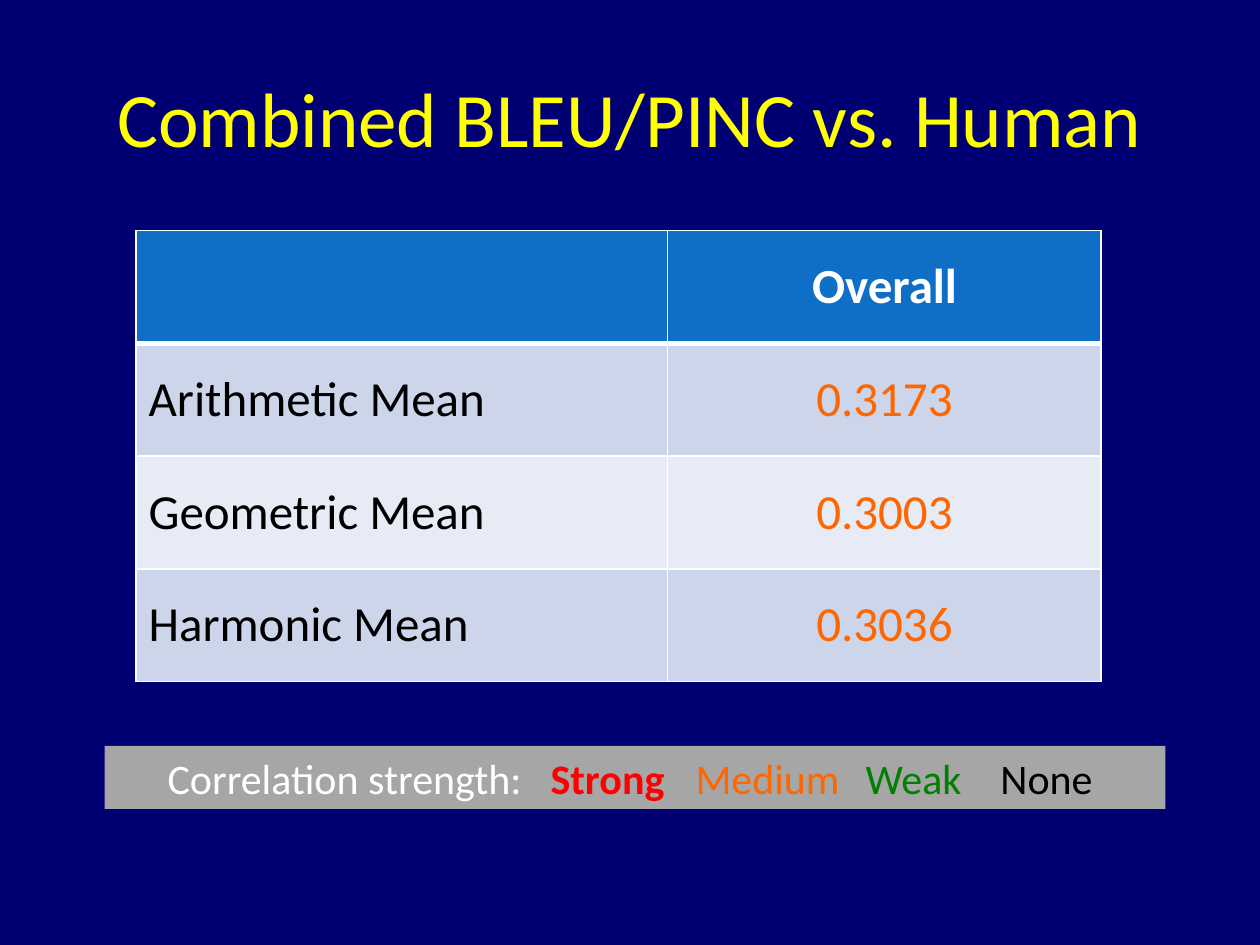
import dataclasses

import pptx
import pptx.dml.color
import pptx.enum.shapes
import pptx.enum.text
import pptx.oxml
import pptx.oxml.ns
import pptx.util

ALIGN = pptx.enum.text.PP_ALIGN
ANCHOR = pptx.enum.text.MSO_ANCHOR
NS = pptx.oxml.ns.nsdecls("a")


@dataclasses.dataclass(frozen=True)
class Theme:
    font: str = "Calibri"
    title_size: int = 44
    table_size: int = 28
    legend_size: int = 24
    background: str = "000072"
    title: str = "FFFF00"
    header: str = "0F6FC6"
    bands: tuple = ("CCD5EA", "E7EBF5")
    legend: str = "A6A6A6"
    white: str = "FFFFFF"
    black: str = "000000"
    strong: str = "FF0000"
    medium: str = "FF6600"
    weak: str = "008000"


def rgb(value):
    return pptx.dml.color.RGBColor.from_string(value)


def fill(target, color):
    target.fill.solid()
    target.fill.fore_color.rgb = rgb(color)


class Deck:
    """Holds the theme and the current slide; lengths are shares of the slide."""

    def __init__(self, theme):
        self.theme = theme
        self.prs = pptx.Presentation()
        self.prs.slide_width = pptx.util.Inches(10)
        self.prs.slide_height = pptx.util.Inches(7.5)
        self.s = self.prs.slides.add_slide(self.prs.slide_layouts[6])
        fill(self.s.background, theme.background)

    def x(self, share):
        return round(self.prs.slide_width * share)

    def y(self, share):
        return round(self.prs.slide_height * share)

    def box(self, left, top, width, height):
        return self.x(left), self.y(top), self.x(width), self.y(height)

    def run(self, p, text, size, color, bold=False):
        r = p.add_run()
        r.text = text
        r.font.name = self.theme.font
        r.font.size = pptx.util.Pt(size)
        r.font.bold = bold
        r.font.color.rgb = rgb(color)

    def title(self, text, *area):
        tf = self.s.shapes.add_textbox(*self.box(*area)).text_frame
        tf.word_wrap = True
        tf.vertical_anchor = ANCHOR.MIDDLE
        p = tf.paragraphs[0]
        p.alignment = ALIGN.CENTER
        self.run(p, text, self.theme.title_size, self.theme.title)

    def border(self, cell, side, points):
        cell._tc.get_or_add_tcPr().append(pptx.oxml.parse_xml(
            f'<a:{side} {NS} w="{pptx.util.Pt(points)}"><a:solidFill>'
            f'<a:srgbClr val="{self.theme.white}"/></a:solidFill></a:{side}>'))

    def table(self, rows, widths, *area):
        t = self.theme
        table = self.s.shapes.add_table(
            len(rows), len(widths), *self.box(*area)).table
        for column, width in zip(table.columns, widths):
            column.width = self.x(width)
        for i, row in enumerate(rows):
            for j, text in enumerate(row):
                cell = table.cell(i, j)
                cell.vertical_anchor = ANCHOR.MIDDLE
                # Borders come before the fill; the header rule is heavier
                for side in ("lnL", "lnR", "lnT", "lnB"):
                    heavy = (i, side) in ((0, "lnB"), (1, "lnT"))
                    self.border(cell, side, 3 if heavy else 1)
                fill(cell, t.bands[(i - 1) % 2] if i else t.header)
                p = cell.text_frame.paragraphs[0]
                p.alignment = ALIGN.CENTER if j else ALIGN.LEFT
                color = t.white if i == 0 else t.medium if j else t.black
                if text:
                    self.run(p, text, t.table_size, color, bold=i == 0)

    def legend(self, entries, inset, tabs, *area):
        sp = self.s.shapes.add_shape(
            pptx.enum.shapes.MSO_SHAPE.RECTANGLE, *self.box(*area))
        sp.shadow.inherit = False
        fill(sp, self.theme.legend)
        sp.line.fill.background()
        tf = sp.text_frame
        tf.word_wrap = True
        tf.vertical_anchor = ANCHOR.TOP
        tf.margin_left = self.x(inset)
        p = tf.paragraphs[0]
        p.alignment = ALIGN.LEFT
        stops = "".join(f'<a:tab pos="{self.x(tab)}" algn="l"/>' for tab in tabs)
        p._p.get_or_add_pPr().append(
            pptx.oxml.parse_xml(f"<a:tabLst {NS}>{stops}</a:tabLst>"))
        for i, (text, color, bold) in enumerate(entries):
            tab = "\t" if i < len(entries) - 1 else ""
            self.run(p, text + tab, self.theme.legend_size, color, bold)


def main():
    t = Theme()
    deck = Deck(t)

    # Heading
    deck.title("Combined BLEU/PINC vs. Human", 0.05, 0.04, 0.9, 1 / 6)

    # Correlation table
    deck.table(
        [("", "Overall"),
         ("Arithmetic Mean", "0.3173"),
         ("Geometric Mean", "0.3003"),
         ("Harmonic Mean", "0.3036")],
        (0.422, 0.344), 0.108, 1.83 / 7.5, 0.766, 3.58 / 7.5)

    # Key to the colours, spaced by tab stops
    deck.legend(
        [("Correlation strength:", t.white, False),
         ("Strong", t.strong, True),
         ("Medium", t.medium, False),
         ("Weak", t.weak, False),
         ("None", t.black, False)],
        0.05, (0.304, 0.419, 0.554, 0.661),
        0.083, 5.92 / 7.5, 0.842, 0.5 / 7.5)

    deck.prs.save("out.pptx")


if __name__ == "__main__":
    main()
